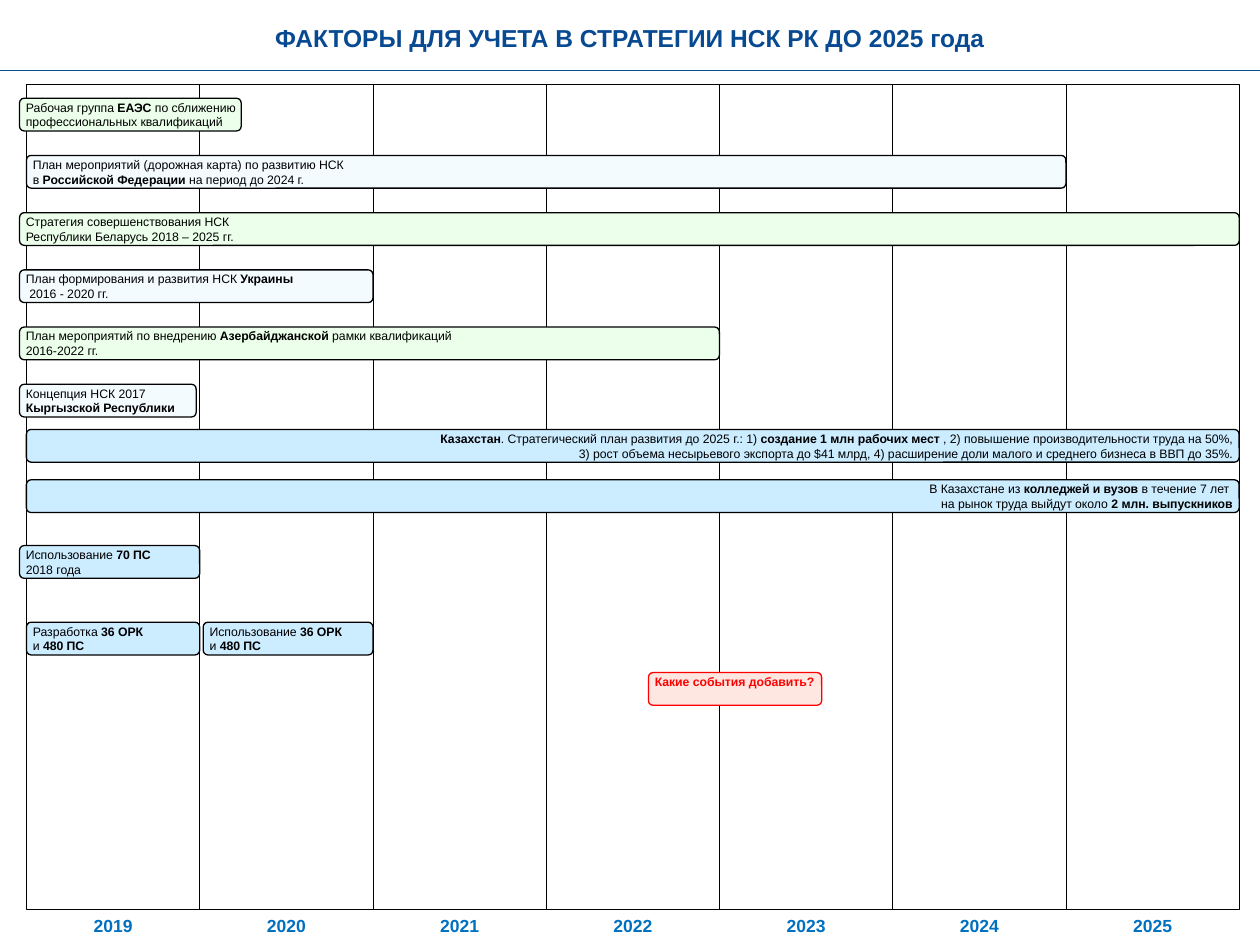
from pptx import Presentation
from pptx.dml.color import RGBColor
from pptx.enum.shapes import MSO_CONNECTOR, MSO_SHAPE
from pptx.enum.text import MSO_ANCHOR, PP_ALIGN
from pptx.oxml.ns import qn
from pptx.util import Inches, Pt

RECT, ROUND = MSO_SHAPE.RECTANGLE, MSO_SHAPE.ROUNDED_RECTANGLE
LEFT, CENTER, RIGHT = PP_ALIGN.LEFT, PP_ALIGN.CENTER, PP_ALIGN.RIGHT
TOP, MIDDLE = MSO_ANCHOR.TOP, MSO_ANCHOR.MIDDLE

COLORS = {
    "title": "084A92", "year": "0070C0", "black": "000000", "red": "FF0000",
    "green": "EBFFEB", "pale": "F3FBFF", "blue": "CCECFF", "pink": "FFE7E1",
}
FONT = "Arial"
W, H = 10, 7.5
GRID_X, GRID_Y, COL_W, GRID_H = 0.21, 0.67, 1.375, 6.55
BAR_Y, ROW_H, BAR_H = 0.78, 0.454, 0.26

TITLE = "**ФАКТОРЫ ДЛЯ УЧЕТА В СТРАТЕГИИ НСК РК ДО 2025 года**"
YEARS = range(2019, 2026)
BEFORE = -0.04

# row, first column edge, last column edge, fill, alignment, paragraphs
BARS = [
    (0, BEFORE, 1.24, "green", LEFT,
     ["Рабочая группа **ЕАЭС** по сближению профессиональных квалификаций"]),
    (1, 0, 6, "pale", LEFT,
     ["План мероприятий (дорожная карта) по развитию НСК",
      "в **Российской Федерации **на период до 2024 г."]),
    (2, BEFORE, 7, "green", LEFT,
     ["Стратегия совершенствования НСК",
      "Республики Беларусь 2018 – 2025 гг."]),
    (3, BEFORE, 2, "pale", LEFT,
     ["План формирования и развития НСК **Украины**", " 2016 - 2020 гг."]),
    (4, BEFORE, 4, "green", LEFT,
     ["План мероприятий по внедрению **Азербайджанской **рамки квалификаций",
      "2016-2022 гг."]),
    (5, BEFORE, 0.98, "pale", LEFT,
     ["Концепция НСК 2017", "**Кыргызской Республики**"]),
    (5.79, 0, 7, "blue", RIGHT,
     ["**Казахстан**. Стратегический план развития до 2025 г.: 1) "
      "**создание 1 млн рабочих мест **, 2) повышение производительности труда на 50%,\n"
      "3) рост объема несырьевого экспорта до $41 млрд, "
      "4) расширение доли малого и среднего бизнеса в ВВП до 35%."]),
    (6.67, 0, 7, "blue", RIGHT,
     ["В Казахстане из **колледжей и вузов **в течение 7 лет ",
      "на рынок труда выйдут около **2 млн. выпускников**"]),
    (7.82, BEFORE, 1, "blue", LEFT, ["Использование **70 ПС**", "2018 года"]),
    (9.16, 0, 1, "blue", LEFT, ["Разработка **36 ОРК**", "и **480 ПС**"]),
    (9.16, 1.02, 2, "blue", LEFT, ["Использование **36 ОРК**", "и **480 ПС**"]),
    (10.04, 3.59, 4.59, "pink", LEFT, ["**Какие события добавить?**"]),
]


def rgb(name):
    return RGBColor.from_string(COLORS[name])


def add_text(sp, paragraphs, size, color, align, anchor=MIDDLE, insets=(0, 0)):
    tf = sp.text_frame
    tf.word_wrap = True
    tf.vertical_anchor = anchor
    tf.margin_left, tf.margin_right = map(Inches, insets)
    tf.margin_top = tf.margin_bottom = 0
    for i, text in enumerate(paragraphs):
        p = tf.add_paragraph() if i else tf.paragraphs[0]
        p.alignment = align
        for j, part in enumerate(text.split("**")):
            for k, line in enumerate(part.split("\n")):
                if k:
                    p.add_line_break()
                if line:
                    r = p.add_run()
                    r.text = line
                    r.font.name, r.font.size = FONT, Pt(size)
                    r.font.bold = j % 2 == 1
                    r.font.color.rgb = rgb(color)


def add_label(s, x, y, w, h, text, size, color):
    sp = s.shapes.add_textbox(*map(Inches, (x, y, w, h)))
    add_text(sp, [text], size, color, CENTER)


def add_box(s, kind, x, y, w, h, line, width, fill=None):
    sp = s.shapes.add_shape(kind, *map(Inches, (x, y, w, h)))
    sp.shadow.inherit = False
    if fill:
        sp.fill.solid()
        sp.fill.fore_color.rgb = rgb(fill)
    else:
        sp.fill.background()
    sp.line.color.rgb = rgb(line)
    sp.line.width = Pt(width)
    return sp


def main():
    prs = Presentation()
    prs.slide_width, prs.slide_height = Inches(W), Inches(H)
    s = prs.slides.add_slide(prs.slide_layouts[6])

    add_label(s, 0, 0.13, W, 0.34, TITLE, 14, "title")
    rule = s.shapes.add_connector(
        MSO_CONNECTOR.STRAIGHT, 0, Inches(0.56), Inches(W), Inches(0.56))
    rule.line.color.rgb = rgb("title")
    rule.line.width = Pt(1)
    sp_pr = rule._element.spPr
    sp_pr.append(sp_pr.makeelement(qn("a:effectLst"), {}))

    for i, year in enumerate(YEARS):
        x = GRID_X + i * COL_W
        add_box(s, RECT, x, GRID_Y, COL_W, GRID_H, "black", 0.25)
        add_label(s, x, 7.26, COL_W, 0.17, f"**{year}**", 10, "year")

    for row, start, end, fill, align, paragraphs in BARS:
        question = fill == "pink"
        ink = "red" if question else "black"
        sp = add_box(s, ROUND, GRID_X + start * COL_W, BAR_Y + row * ROW_H,
                     (end - start) * COL_W, BAR_H, ink, 0.75, fill)
        sp.adjustments[0] = 0.143
        add_text(sp, paragraphs, 7, ink, align, TOP if question else MIDDLE,
                 (0.04, 0.04 if align == RIGHT else 0))

    prs.save("out.pptx")


if __name__ == "__main__":
    main()
